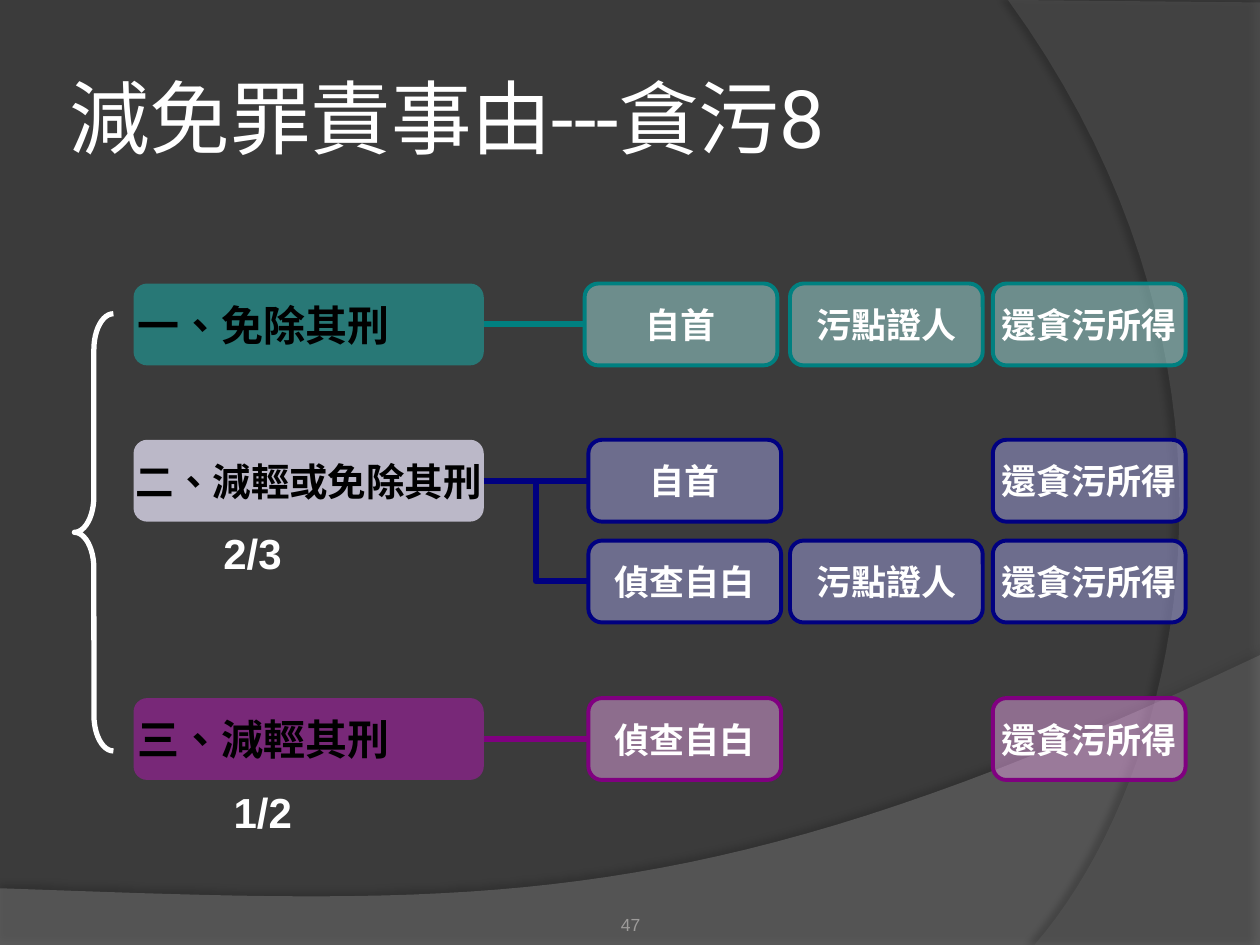
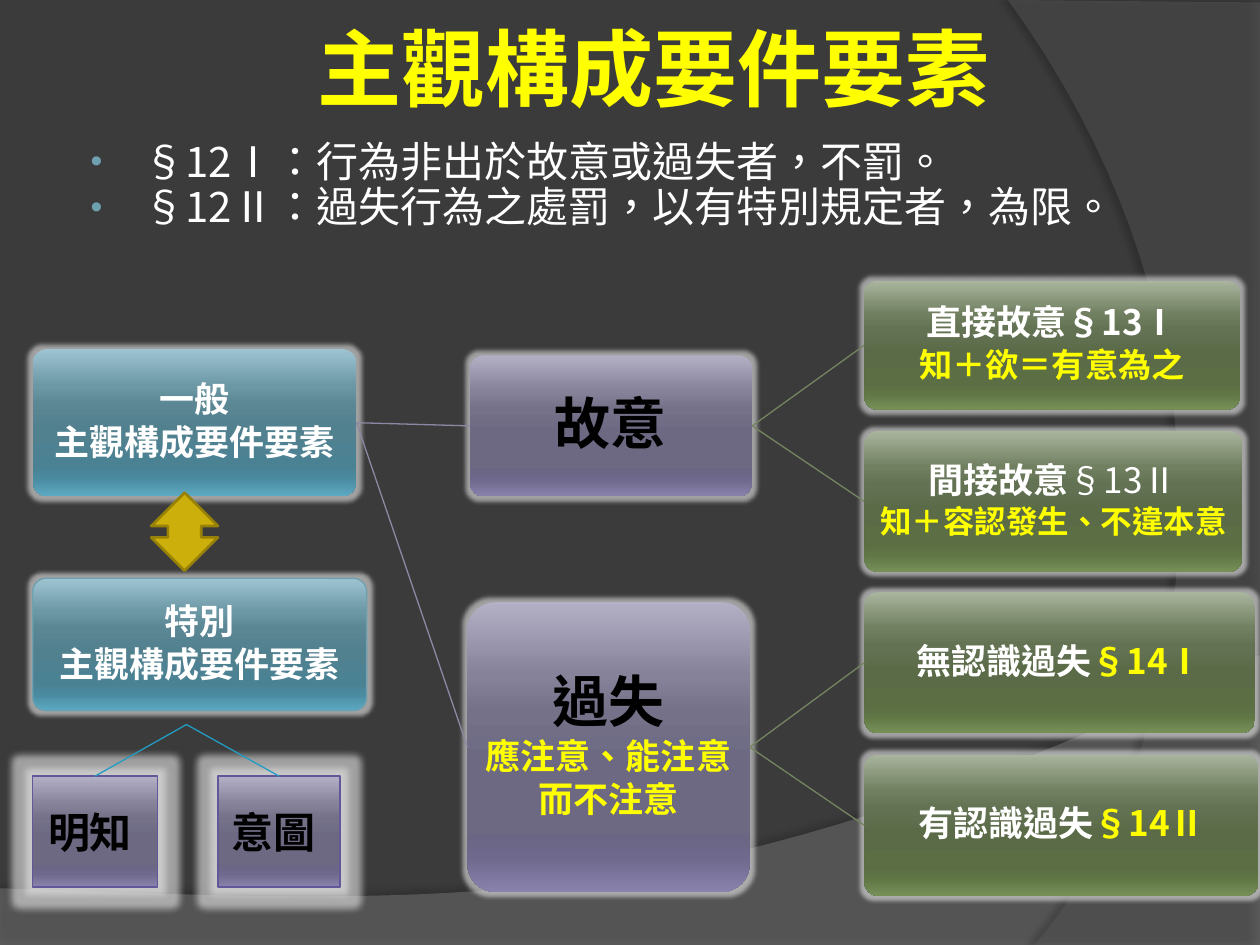
import pptx
import pptx.util
import pptx.dml.color
import pptx.enum.shapes
import pptx.enum.text
import pptx.oxml
import pptx.oxml.ns
import lxml.etree

Inches, Pt = pptx.util.Inches, pptx.util.Pt
qn = pptx.oxml.ns.qn
SHAPE = pptx.enum.shapes.MSO_SHAPE
CONNECTOR = pptx.enum.shapes.MSO_CONNECTOR
ALIGN = pptx.enum.text.PP_ALIGN
ANCHOR = pptx.enum.text.MSO_ANCHOR
TOP, LEFT, RIGHT = 0, 1, 3

HAN, WHITE, BLACK, YELLOW = "Noto Sans CJK SC", "FFFFFF", "000000", "FFFF00"
STOPS = (0, 25, 38, 55, 80, 88, 100)
BLUE = "9EC4D2 6C97A5 5B8694 51808F 4A8294 4A8BA0 5DAAC2".split()
VIOLET = "B3B0C6 86829A 747188 6D6983 6A6684 6F698D 8982AC".split()
GREEN = "A9B59D 728062 647254 5B6B48 5B6E44 607645 769058".split()


def rgb(value):
    """Turn a hex string into a colour."""
    return pptx.dml.color.RGBColor.from_string(value)


def add_xml(parent, tag, **attributes):
    """Append a DrawingML element to a parent."""
    return lxml.etree.SubElement(parent, qn("a:" + tag), {k: str(v) for k, v in attributes.items()})


def add_colour(parent, value, opacity=100):
    """Append a colour with its opacity in percent."""
    colour = add_xml(parent, "srgbClr", val=value)
    if opacity < 100:
        add_xml(colour, "alpha", val=opacity * 1000)


def dress(font, size=None, colour=None, face=None, bold=None):
    """Set those font properties that are given."""
    if size:
        font.size = Pt(size)
    if colour:
        font.color.rgb = rgb(colour)
    if face:
        font.name = face
    if bold is not None:
        font.bold = bold


def bezier(start, first, second, end, steps=40):
    """List the points of a cubic curve after its start."""
    points = []
    for step in range(1, steps + 1):
        t = step / steps
        weights = ((1 - t) ** 3, 3 * t * (1 - t) ** 2, 3 * t * t * (1 - t), t ** 3)
        points.append(tuple(sum(w * p[axis] for w, p in zip(weights, (start, first, second, end)))
                            for axis in (0, 1)))
    return points


class Deck:
    """Holds the presentation, its style and the current slide."""

    def __init__(self):
        """Start a 4:3 deck with a dark master."""
        self.prs = pptx.Presentation()
        self.prs.slide_width, self.prs.slide_height = Inches(10), Inches(7.5)
        background = self.prs.slide_master.background.fill
        background.solid()
        background.fore_color.rgb = rgb("3B3B3B")
        self.slide = None

    def new_slide(self, layout):
        """Add a slide and make it current."""
        self.slide = self.prs.slides.add_slide(self.prs.slide_layouts[layout])

    def effect(self, shape, tag=None, colour=None, opacity=100, **attributes):
        """Replace the shape's effects with one effect or none."""
        shape.shadow.inherit = False
        if tag:
            effects = shape.element.spPr.find(qn("a:effectLst"))
            add_colour(add_xml(effects, tag, **attributes), colour, opacity)

    def paint(self, shape, fill=None, opacity=100, line=None, width=0.75):
        """Fill and outline a shape; a list of colours makes a gradient."""
        if isinstance(fill, list):
            shape.fill.gradient()
            shape.fill.gradient_angle = 270
            stops = shape.element.spPr.find(".//" + qn("a:gsLst"))
            for old in list(stops):
                stops.remove(old)
            for position, colour in zip(STOPS, fill):
                add_colour(add_xml(stops, "gs", pos=position * 1000), colour)
        elif fill:
            shape.fill.solid()
            shape.fill.fore_color.rgb = rgb(fill)
            if opacity < 100:
                colour = shape.element.spPr.find(qn("a:solidFill"))[0]
                add_xml(colour, "alpha", val=opacity * 1000)
        else:
            shape.fill.background()
        if line:
            shape.line.color.rgb = rgb(line)
            shape.line.width = Pt(width)
        else:
            shape.line.fill.background()

    def master_band(self, points, fill, opacity, shade, distance, angle):
        """Draw a translucent band and move it to the master."""
        builder = self.slide.shapes.build_freeform(*map(Inches, points[0]))
        builder.add_line_segments([tuple(map(Inches, p)) for p in points[1:]], close=True)
        band = builder.convert_to_shape()
        self.paint(band, fill, opacity)
        self.effect(band, "outerShdw", BLACK, shade, blurRad=Pt(4), dist=Pt(distance),
                    dir=angle * 60000, rotWithShape=0)
        tree = self.prs.slide_master.element.cSld.spTree
        band.element.nvSpPr.cNvPr.set("id", str(len(tree) + 20))
        tree.insert(len(tree.findall(qn("p:sp"))) - 5 + 2, band.element)

    def put_text(self, frame, paragraphs, align=ALIGN.CENTER, anchor=ANCHOR.MIDDLE, insets=None,
                 wrap=True, spacing=None, after=0, bullet=None, **style):
        """Fill a frame with paragraphs, each a string or a list of (text, changes) runs."""
        frame.word_wrap = wrap
        frame.auto_size = pptx.enum.text.MSO_AUTO_SIZE.NONE
        frame.vertical_anchor = anchor
        if insets:
            (frame.margin_left, frame.margin_top,
             frame.margin_right, frame.margin_bottom) = map(Inches, insets)
        for index, content in enumerate(paragraphs):
            paragraph = frame.add_paragraph() if index else frame.paragraphs[0]
            runs = [(content, {})] if isinstance(content, str) else content
            properties = paragraph._p.get_or_add_pPr()
            if bullet:
                properties.set("marL", str(Inches(0.46)))
                properties.set("indent", str(Inches(-0.42)))
                add_colour(add_xml(properties, "buClr"), bullet)
                add_xml(properties, "buSzPct", val=80000)
                add_xml(properties, "buChar", char="•")
            paragraph.alignment = align
            paragraph.space_before = Pt(0)
            paragraph.space_after = Pt(after)
            if spacing:
                paragraph.line_spacing = spacing
            single = len(runs) == 1
            dress(paragraph.font, **(style | runs[0][1] if single else style))
            add_xml(properties.find(qn("a:defRPr")), "ea", typeface=HAN)
            for text, changes in runs:
                run = paragraph.add_run()
                run.text = text
                run._r.get_or_add_rPr().set("lang", "zh-TW")
                if not single:
                    dress(run.font, **changes)

    def placeholder(self, index, at, paragraphs, **style):
        """Move a template placeholder and fill it."""
        holder = self.slide.placeholders[index]
        holder.left, holder.top, holder.width, holder.height = map(Inches, at)
        self.put_text(holder.text_frame, paragraphs, **style)

    def textbox(self, at, text, **style):
        """Add a free line of text."""
        box = self.slide.shapes.add_textbox(*map(Inches, at))
        self.put_text(box.text_frame, [text], **style)

    def shape(self, kind, at, adjust=(), glow=0, fill=None, opacity=100, line=None, width=0.75):
        """Add a preset shape, with a pale glow if asked."""
        shape = self.slide.shapes.add_shape(kind, *map(Inches, at))
        for index, value in enumerate(adjust):
            shape.adjustments[index] = value
        self.paint(shape, fill, opacity, line, width)
        if glow:
            self.effect(shape, "glow", "E6E6E6", 60, rad=Pt(glow))
        else:
            self.effect(shape)
        return shape

    def connect(self, colour, width, start, end, kind=CONNECTOR.STRAIGHT):
        """Connect two ends, each a point or a (shape, side) pair."""
        link = self.slide.shapes.add_connector(kind, 0, 0, 0, 0)
        if isinstance(start[0], (int, float)):
            link.begin_x, link.begin_y = map(Inches, start)
        else:
            link.begin_connect(*start)
        link.end_connect(*end)
        link.line.color.rgb = rgb(colour)
        link.line.width = Pt(width)
        add_xml(link.element.spPr, "effectLst")

    def penalty(self, top, text, fill, **style):
        """Add the label of one kind of penalty relief."""
        label = self.shape(SHAPE.ROUNDED_RECTANGLE, (1.06, top, 2.78, 0.65), fill=fill)
        self.put_text(label.text_frame, [text], wrap=False, face=HAN, colour=BLACK, bold=True, **style)
        return label

    def condition(self, left, top, text, fill, line, face=HAN):
        """Add one condition for a relief."""
        box = self.shape(SHAPE.ROUNDED_RECTANGLE, (left, top, 1.53, 0.65), fill=fill, opacity=50,
                         line=line, width=2.25)
        self.put_text(box.text_frame, [text], wrap=False, size=20, face=face, colour=WHITE, bold=True)
        return box

    def element(self, at, paragraphs, fill, line=None, size=20, colour=WHITE):
        """Add one glowing node of the hierarchy."""
        node = self.shape(SHAPE.ROUNDED_RECTANGLE, at, (0.1,), 5, fill, line=line)
        self.put_text(node.text_frame, paragraphs, insets=[0.05] * 4, spacing=0.9, after=3,
                      size=size, face="Calibri", colour=colour, bold=True)
        return node


def add_bands(deck):
    """Put the two curved bands on the master."""
    deck.master_band([(0, 7.05), (0, 7.5), (10, 7.5), (10, 5.2)]
                     + bezier((10, 5.2), (5.59, 7.29), (3.91, 7.19), (0, 7.05)),
                     "7F7F7F", 45, 35, 3.5, 270)
    deck.master_band([(10, 0.02), (10, 7.5), (8.21, 7.5)]
                     + bezier((8.21, 7.5), (9.35, 6.19), (10.18, 3), (8, 0)),
                     "5E5E5E", 40, 45, 4, 180)


def relief_slide(deck):
    """Build the slide on grounds for relief from punishment."""
    deck.placeholder(0, (0.5, 0.3, 8.17, 1.25), ["減免罪責事由---貪污8"], align=ALIGN.LEFT,
                     insets=[0.05] * 4, size=46, face="Roboto", colour=WHITE)
    deck.textbox((3.42, 7.02, 3.17, 0.4), "47", anchor=ANCHOR.BOTTOM, insets=(0, 0.05, 0, 0),
                 size=10, face="Arial", colour="9D9B9A")
    flush = {"align": ALIGN.LEFT, "insets": (0, 0.05, 0.1, 0.05), "size": 24}
    exempt = deck.penalty(2.25, "一、免除其刑", "287876", **flush)
    either = deck.penalty(3.49, "二、減輕或免除其刑", "BBB8C8", size=22)
    reduced = deck.penalty(5.54, "三、減輕其刑", "782878", **flush)
    teal, navy, purple = ("A0E0DE", "008080"), ("A0A0E0", "000080"), ("E0A0E0", "800080")
    rows = [(exempt, 4.64, 2.25, "自首", True, teal, HAN),
            (either, 4.67, 3.49, "自首", False, navy, "Arial"),
            (either, 4.67, 4.29, "偵查自白", True, navy, "Arial"),
            (reduced, 4.67, 5.54, "偵查自白", False, purple, "Arial")]
    for label, left, top, confession, witness, colours, face in rows:
        box = deck.condition(left, top, confession, *colours)
        kind = CONNECTOR.STRAIGHT if label.top == box.top else CONNECTOR.ELBOW
        deck.connect(colours[1], 3.5, (label, RIGHT), (box, LEFT), kind)
        if witness:
            deck.condition(6.27, top, "污點證人", *colours)
        deck.condition(7.88, top, "還貪污所得", *colours, face)
    for left, top, share in ((1.61, 4.14, "2/3"), (1.69, 6.19, "1/2")):
        deck.textbox((left, top, 0.79, 0.5), share, size=24, face="Arial", colour=WHITE, bold=True)
    deck.shape(SHAPE.LEFT_BRACE, (0.59, 2.49, 0.31, 3.47), (0.92, 0.5), line=WHITE, width=3)


def intent_slide(deck):
    """Build the slide on subjective elements of an offence."""
    deck.placeholder(0, (0.37, 0, 9.63, 1.07), ["主觀構成要件要素"], insets=[0.05] * 4,
                     size=48, face=HAN, colour=YELLOW, bold=True)
    deck.placeholder(1, (0.58, 1.07, 8.99, 6.2),
                     ["§12Ⅰ：行為非出於故意或過失者，不罰。", "§12Ⅱ：過失行為之處罰，以有特別規定者，為限。"],
                     align=ALIGN.LEFT, anchor=ANCHOR.TOP, spacing=0.9, bullet="6EA0B0",
                     size=24, face=HAN, colour=WHITE)
    general = deck.element((0.26, 2.77, 2.57, 1.17), ["一般", "主觀構成要件要素"], BLUE)
    deck.element((0.26, 4.59, 2.65, 1.05), ["特別", "主觀構成要件要素"], BLUE, "6EA0B0")
    intent = deck.element((3.73, 2.82, 2.24, 1.12), ["故意"], VIOLET, size=32, colour=BLACK)
    note = {"size": 20, "colour": YELLOW}
    negligence = deck.element((3.71, 4.78, 2.24, 2.3),
                              ["過失", [("應注意、能注意", note)], [("而不注意", note)]],
                              VIOLET, size=32, colour=BLACK)
    for fault in (intent, negligence):
        deck.connect("8D89A4", 0.75, (general, RIGHT), (fault, LEFT))
    article = {"face": HAN}
    cited = article | {"colour": YELLOW}
    forms = [(intent, 2.23, 2.98, 1.02, [[("直接故意", {}), ("§13Ⅰ", article)],
                                         [("知＋欲＝有意為之", {"size": 19, "colour": YELLOW})]]),
             (intent, 3.42, 3, 1.12, [[("間接故意", {}), ("§13Ⅱ", article | {"bold": False})],
                                      [("知＋容認發生、不違本意", cited | {"size": 18})]]),
             (negligence, 4.7, 3.1, 1.12, [[("無認識過失", {}), ("§14Ⅰ", cited)]]),
             (negligence, 5.99, 3.13, 1.12, [[("有認識過失", {}), ("§14Ⅱ", cited)]])]
    for fault, top, width, height, paragraphs in forms:
        form = deck.element((6.86, top, width, height), paragraphs, GREEN)
        deck.connect("748560", 0.75, (fault, RIGHT), (form, LEFT))
    for left, width, text in ((1.73, 0.97, "意圖"), (0.26, 0.99, "明知")):
        aim = deck.shape(SHAPE.RECTANGLE, (left, 6.16, width, 0.88), glow=8, fill=VIOLET, line="625899")
        deck.put_text(aim.text_frame, [text], insets=(0.1, 0.05, 0.18, 0.05), wrap=False,
                      size=24, face="Lato", colour=BLACK, bold=True)
        deck.connect("239BC2", 0.75, (1.48, 5.75), (aim, TOP))
    deck.shape(SHAPE.UP_DOWN_ARROW, (1.2, 3.91, 0.53, 0.62), fill="CCAF0A", line="978107", width=1.5)


def main():
    """Build both slides and save the deck."""
    deck = Deck()
    deck.new_slide(5)
    add_bands(deck)
    relief_slide(deck)
    deck.new_slide(1)
    intent_slide(deck)
    deck.prs.save("out.pptx")


if __name__ == "__main__":
    main()
